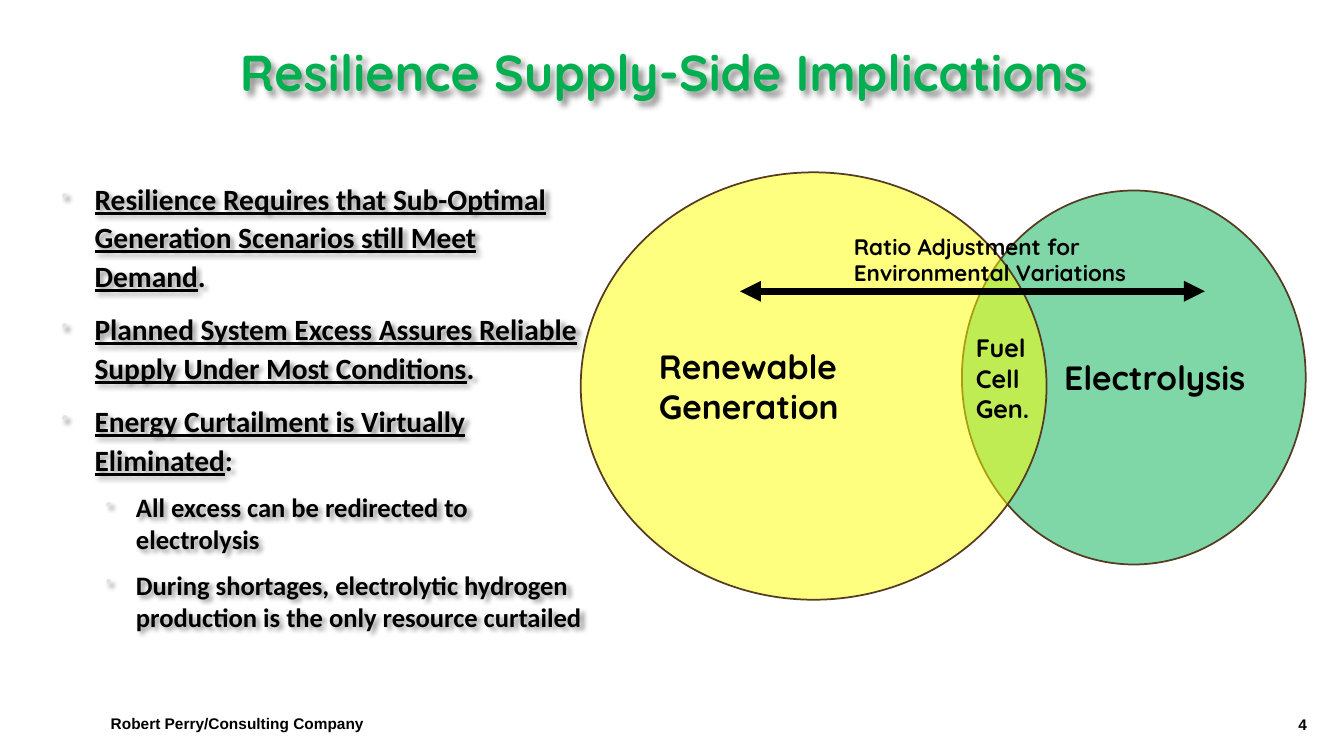
import pptx
import pptx.util
import pptx.dml.color
import pptx.enum.shapes
import pptx.enum.text
import pptx.oxml
import pptx.oxml.ns

PX = 9144  # 100 px to the inch
ALIGN = pptx.enum.text.PP_ALIGN
ANCHOR = pptx.enum.text.MSO_ANCHOR
BLACK, GREEN, YELLOW, BROWN = "000000", "00B050", "FFFF00", "553C22"
BULLET = "E2E2E8"
HEADING_FONT, BODY_FONT, FOOTER_FONT = "Quicksand", "Calibri", "Arial"

# level, underlined text, plain text
POINTS = [
    (0, "Resilience Requires that Sub-Optimal Generation Scenarios still Meet Demand", "."),
    (0, "Planned System Excess Assures Reliable Supply Under Most Conditions", "."),
    (0, "Energy Curtailment is Virtually Eliminated", ":"),
    (1, "", "All excess can be redirected to electrolysis"),
    (1, "", "During shortages, electrolytic hydrogen production is the only resource curtailed"),
]
# level: size in pt, left margin and hanging indent in px, line spacing
LEVELS = {0: (21, 38, 33, 1.1), 1: (19, 79, 30, 1.0)}


def px(*lengths):
    return [pptx.util.Emu(length * PX) for length in lengths]


def color(hex_string):
    return pptx.dml.color.RGBColor.from_string(hex_string)


def add_xml(parent, tag, attributes="", content=""):
    """Append a DrawingML element to parent."""
    namespace = pptx.oxml.ns.nsdecls("a")
    parent.append(pptx.oxml.parse_xml(
        f"<a:{tag} {namespace} {attributes}>{content}</a:{tag}>"))


def set_font(font, name, size, hex_string=BLACK):
    font.name, font.size, font.bold = name, pptx.util.Pt(size), True
    font.color.rgb = color(hex_string)


def write_lines(frame, lines, name, size, hex_string=BLACK, align=ALIGN.LEFT):
    for index, line in enumerate(lines):
        para = frame.paragraphs[0] if index == 0 else frame.add_paragraph()
        para.text, para.alignment = line, align
        set_font(para.font, name, size, hex_string)


def add_text(page, place, lines, name, size, hex_string=BLACK, align=ALIGN.LEFT,
             anchor=ANCHOR.MIDDLE, wrap=True):
    box = page.shapes.add_textbox(*px(*place))
    box.text_frame.word_wrap = wrap
    box.text_frame.vertical_anchor = anchor
    write_lines(box.text_frame, lines, name, size, hex_string, align)
    return box


def add_text_shadow(box):
    add_xml(box._element.spPr, "effectLst", content=(
        '<a:outerShdw blurRad="38100" dist="38100" dir="2700000">'
        f'<a:srgbClr val="{BLACK}"><a:alpha val="43000"/></a:srgbClr></a:outerShdw>'))


def add_circle(page, place, fill, lines, align):
    circle = page.shapes.add_shape(pptx.enum.shapes.MSO_SHAPE.OVAL, *px(*place))
    circle.shadow.inherit = False
    circle.fill.solid()
    circle.fill.fore_color.rgb = color(fill)
    fill_color = circle._element.spPr.find(pptx.oxml.ns.qn("a:solidFill"))[0]
    add_xml(fill_color, "alpha", 'val="50000"')
    circle.line.color.rgb = color(BROWN)
    circle.line.width = pptx.util.Pt(1.25)
    circle.text_frame.word_wrap = True
    circle.text_frame.vertical_anchor = ANCHOR.MIDDLE
    write_lines(circle.text_frame, lines, HEADING_FONT, 24, BLACK, align)


def add_double_arrow(page, left, top, width):
    arrow = page.shapes.add_connector(pptx.enum.shapes.MSO_CONNECTOR.STRAIGHT,
                                      *px(left, top, left + width, top))
    arrow.line.color.rgb = color(BLACK)
    arrow.line.width = pptx.util.Pt(5)
    for end in ("headEnd", "tailEnd"):
        add_xml(arrow.line._get_or_add_ln(), end, 'type="triangle"')
    add_xml(arrow._element.spPr, "effectLst")


def add_title(page, place):
    box = add_text(page, place, ["Resilience Supply-Side Implications"],
                   HEADING_FONT, 36, GREEN, ALIGN.CENTER)
    box.text_frame.paragraphs[0].line_spacing = 0.9
    add_text_shadow(box)


def add_points(page, place):
    box = page.shapes.add_textbox(*px(*place))
    frame = box.text_frame
    frame.word_wrap = True
    for index, (level, underlined, plain) in enumerate(POINTS):
        size, margin, hanging, spacing = LEVELS[level]
        para = frame.paragraphs[0] if index == 0 else frame.add_paragraph()
        para.level, para.line_spacing = level, spacing
        para.space_before, para.space_after = pptx.util.Pt(size * 0.2), pptx.util.Pt(6)
        set_font(para.font, BODY_FONT, size)
        if underlined:
            span = para.add_run()
            span.text, span.font.underline = underlined, True
        para.add_run().text = plain
        # Bullet, placed ahead of the paragraph's default font
        properties = para._p.get_or_add_pPr()
        properties.set("marL", str(margin * PX))
        properties.set("indent", str(-hanging * PX))
        default_font = properties.find(pptx.oxml.ns.qn("a:defRPr"))
        add_xml(properties, "buClr", content=f'<a:srgbClr val="{BULLET}"/>')
        add_xml(properties, "buSzPct", 'val="70000"')
        add_xml(properties, "buChar", 'char="•"')
        properties.append(default_font)
    add_text_shadow(box)


def add_venn(page, left, top):
    # Overlapping circles
    add_circle(page, (left + 378, top + 18, 341, 371), GREEN, ["Electrolysis"], ALIGN.RIGHT)
    add_circle(page, (left, top, 462, 424), YELLOW, ["Renewable", "Generation"], ALIGN.LEFT)
    # Overlap label
    add_text(page, (left + 382, top + 154, 80, 101), ["Fuel", "Cell", "Gen."],
             HEADING_FONT, 18, anchor=ANCHOR.TOP, wrap=False)
    # Ratio arrow and its caption
    add_double_arrow(page, left + 158, top + 118, 461)
    add_text(page, (left + 261, top + 55, 321, 64),
             ["Ratio Adjustment for", "Environmental Variations"],
             HEADING_FONT, 16, anchor=ANCHOR.TOP)


def add_footer(page, left, top, width):
    add_text(page, (left, top, 730, 40), ["Robert Perry/Consulting Company"], FOOTER_FONT, 11)
    add_text(page, (left + width - 82, top + 1, 82, 40), ["4"], FOOTER_FONT, 11,
             align=ALIGN.RIGHT)


def main():
    deck = pptx.Presentation()
    deck.slide_width, deck.slide_height = px(1333, 750)
    page = deck.slides.add_slide(deck.slide_layouts[6])
    add_title(page, (69, 45, 1179, 59))
    add_footer(page, 100, 698, 1206)
    add_points(page, (46, 171, 551, 500))
    add_venn(page, 576, 171)
    deck.save("out.pptx")


if __name__ == "__main__":
    main()
